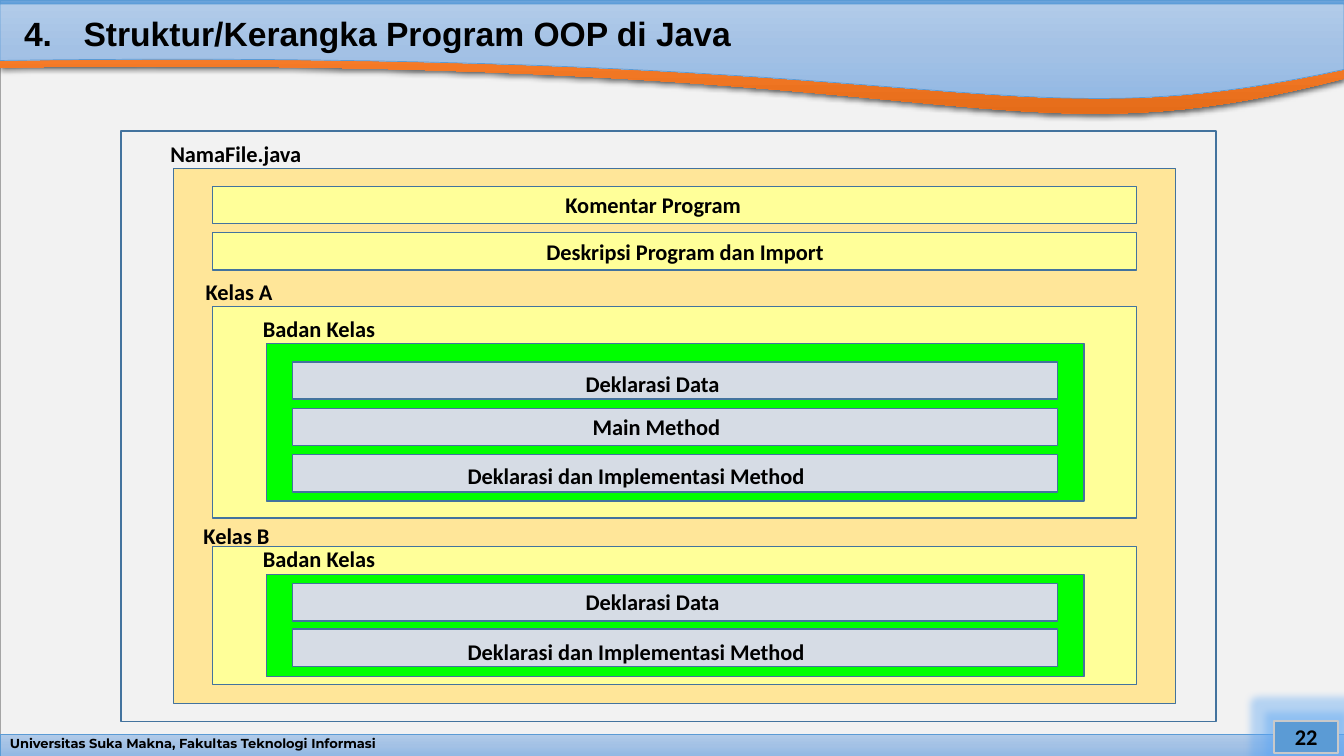
from copy import deepcopy
from lxml.etree import SubElement as Sub
from pptx import Presentation
from pptx.dml.color import RGBColor
from pptx.enum.shapes import MSO_SHAPE as Shape
from pptx.enum.text import MSO_ANCHOR as Anchor, MSO_AUTO_SIZE as Auto, PP_ALIGN as Align
from pptx.oxml.ns import qn
from pptx.util import Cm, Pt

WIDE, HIGH = 13.33, 7.5
BLUE = "5B9BD5"
EDGE = "43739E"
YELLOW = "FFFF99"
GREEN = "00FF00"
GREY = "D6DCE5"
PALE = ["B1CBE9", "A3C1E5", "93B9E4"]
DEEP = ["71A6DB", "559BDB", "448ACA"]
ORANGE = ["F18C57", "F67B28", "E56C19"]
ROW = 0.37


def inch(size):
    return Cm(size * 2.54)


def color(code):
    return RGBColor.from_string(code)


def blend(shape, codes):
    shape.fill.gradient()
    shape.fill.gradient_angle = 270
    stops = shape.element.spPr.find(".//" + qn("a:gsLst"))
    stops.insert(1, deepcopy(stops[0]))
    for stop, code, place in zip(shape.fill.gradient_stops, codes, (0, 0.5, 1)):
        stop.color.rgb = color(code)
        stop.position = place


def paint(shape, fill, line, width):
    shape.shadow.inherit = False
    if fill is None:
        shape.fill.background()
    elif isinstance(fill, list):
        blend(shape, fill)
    else:
        shape.fill.solid()
        shape.fill.fore_color.rgb = color(fill)
    if line is None:
        shape.line.fill.background()
    else:
        shape.line.color.rgb = color(line)
        shape.line.width = Pt(width)


def effect(shape, kind, code, alpha, **sizes):
    group = shape.element.spPr.find(qn("a:effectLst"))
    node = Sub(group, qn("a:" + kind), {key: str(val) for key, val in sizes.items()})
    tint = Sub(node, qn("a:srgbClr"), val=code)
    Sub(tint, qn("a:alpha"), val=str(alpha * 1000))


def box(slide, x, y, w, h, fill=None, line=EDGE, width=1):
    shape = slide.shapes.add_shape(Shape.RECTANGLE, inch(x), inch(y), inch(w), inch(h))
    paint(shape, fill, line, width)
    return shape


def wave(slide, top, start, bend, dip, end, fill, line=None):
    points = [(0, top), (0, start)]
    steps = 40
    for i in range(1, steps + 1):
        t = i / steps
        s = 1 - t
        a, b, c, d = s ** 3, 3 * s * s * t, 3 * s * t * t, t ** 3
        points.append((9.76 * b + 9.86 * c + WIDE * d,
                       start * a + bend * b + dip * c + end * d))
    path = slide.shapes.build_freeform(inch(WIDE), inch(top))
    path.add_line_segments([(inch(x), inch(y)) for x, y in points])
    shape = path.convert_to_shape()
    paint(shape, fill, line, 0.5)
    return shape


def write(shape, text, size=16, font="Calibri", align=Align.LEFT, space=None):
    para = shape.text_frame.paragraphs[0]
    para.text = text
    para.alignment = align
    if space:
        para.line_spacing = space
    for run in para.runs:
        run.font.size = Pt(size)
        run.font.name = font
        run.font.bold = True
        run.font.color.rgb = color("000000")
    return para


def area(slide, x, y, w, h):
    shape = slide.shapes.add_textbox(inch(x), inch(y), inch(w), inch(h))
    shape.text_frame.word_wrap = True
    shape.text_frame.vertical_anchor = Anchor.MIDDLE
    return shape


def label(slide, text, x, y, w, align=Align.LEFT):
    shape = slide.shapes.add_textbox(inch(x), inch(y), inch(w), inch(ROW))
    shape.text_frame.word_wrap = False
    shape.text_frame.auto_size = Auto.SHAPE_TO_FIT_TEXT
    write(shape, text, align=align)


def frame(slide):
    box(slide, 0, 0.04, WIDE, 7.46, "F2F2F2", "A5A5A5", 0.5)
    band = wave(slide, 0.01, 0.67, 0.53, 1.68, 0.78, ORANGE)
    effect(band, "outerShdw", "000000", 63, blurRad=Pt(4.5), dist=Pt(1.5),
           dir=5400000, rotWithShape=0)
    box(slide, 0, 7.29, WIDE, 0.21, PALE, BLUE, 0.5)
    box(slide, 0, 0, WIDE, 0.11, DEEP, BLUE, 0.5)
    wave(slide, 0.04, 0.6, 0.47, 1.44, 0.69, PALE, BLUE)
    foot = area(slide, 0, 7.29, WIDE, 0.21)
    write(foot, "Universitas Suka Makna, Fakultas Teknologi Informasi",
          9.3, "Montserrat", space=0.7)
    page = box(slide, 12.64, 7.15, 0.63, 0.32, BLUE, "C9C9C9", 1.5)
    effect(page, "glow", "5AA5F5", 40, rad=Pt(11))
    page.text_frame.vertical_anchor = Anchor.MIDDLE
    write(page, "22", align=Align.CENTER)


def title(slide):
    shape = area(slide, 0.14, 0.12, 12.98, 0.46)
    para = write(shape, "4.\tStruktur/Kerangka Program OOP di Java", 24, "Arial", space=0.9)
    tabs = Sub(para._p.get_or_add_pPr(), qn("a:tabLst"))
    Sub(tabs, qn("a:tab"), pos=str(inch(0.59)), algn="l")


def chart(slide):
    box(slide, 1.2, 1.3, 10.86, 5.86)
    box(slide, 1.72, 1.67, 9.94, 5.31, "FFE699")
    for y, h in ((1.85, ROW), (2.31, ROW), (3.04, 2.1), (5.42, 1.37)):
        box(slide, 2.11, y, 9.16, h, YELLOW)
    for y, h in ((3.41, 1.56), (5.7, 1.01)):
        box(slide, 2.64, y, 8.11, h, GREEN)
    for y in (3.59, 4.05, 4.51, 5.79, 6.24):
        box(slide, 2.9, y, 7.59, ROW, GREY)
    label(slide, "NamaFile.java", 1.59, 1.34, 1.52)
    label(slide, "Komentar Program", 5.51, 1.85, 1.97)
    label(slide, "Deskripsi Program dan Import", 5.3, 2.31, 2.99, Align.CENTER)
    label(slide, "Kelas A", 1.94, 2.71, 0.87)
    label(slide, "Kelas B", 1.92, 5.13, 0.86)
    label(slide, "Main Method", 5.78, 4.05, 1.48)
    for body, data, code in ((3.08, 3.62, 4.54), (5.36, 5.79, 6.28)):
        label(slide, "Badan Kelas", 2.51, body, 1.33)
        label(slide, "Deklarasi Data", 5.71, data, 1.54)
        label(slide, "Deklarasi dan Implementasi Method", 4.54, code, 3.58)


def main():
    deck = Presentation()
    deck.slide_width = inch(WIDE)
    deck.slide_height = inch(HIGH)
    slide = deck.slides.add_slide(deck.slide_layouts[6])
    frame(slide)
    title(slide)
    chart(slide)
    deck.save("out.pptx")


if __name__ == "__main__":
    main()
